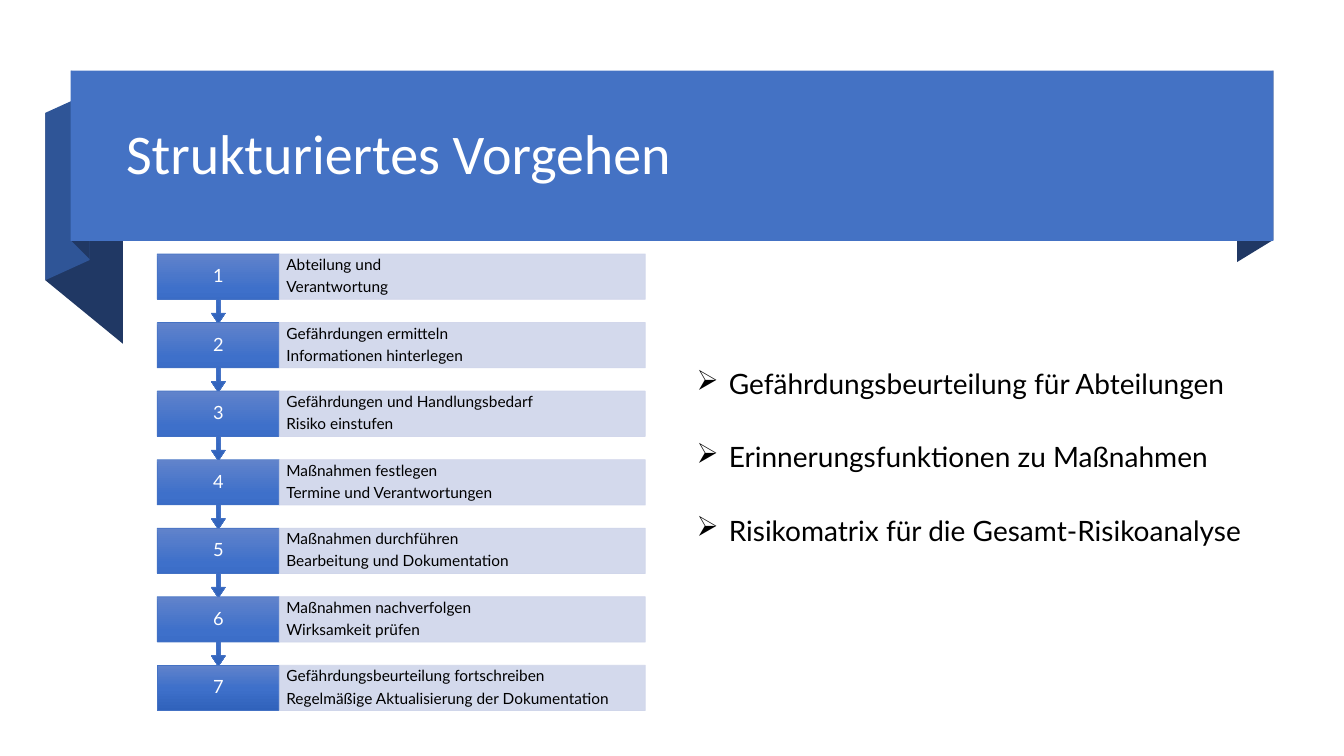
from dataclasses import dataclass

import lxml.etree
import pptx
import pptx.dml.color
import pptx.enum.shapes
import pptx.enum.text
import pptx.oxml
import pptx.oxml.ns
import pptx.shapes.autoshape
import pptx.shapes.base
import pptx.slide
import pptx.text.text
import pptx.util

EMU_PER_PX = 9144  # 100 px to the inch
COLORS = {
    "banner": "4472C4", "fold": "2F5597", "shade": "203864",
    "step_top": "6183CB", "step_middle": "3E70CA", "step_bottom": "3062BB",
    "bar": "CFD5EA", "light": "FFFFFF", "dark": "000000",
}
MAIN_NAMESPACE = pptx.oxml.ns.nsdecls("a")
SHAPE_KIND = pptx.enum.shapes.MSO_SHAPE
ALIGN = pptx.enum.text.PP_ALIGN


@dataclass(frozen=True)
class Box:
    left: int
    top: int
    width: int
    height: int

    def emu(self) -> tuple[int, int, int, int]:
        return px(self.left), px(self.top), px(self.width), px(self.height)


@dataclass(frozen=True)
class Fold:
    color: str
    points: tuple[tuple[int, int], ...]


@dataclass(frozen=True)
class TextStyle:
    size: int
    color: str
    font: str = "Lato"
    align: ALIGN = ALIGN.LEFT
    space_after: float = 0


@dataclass(frozen=True)
class Step:
    heading: str
    detail: str


FOLDS = (
    Fold("shade", ((1263, 238), (1227, 260), (1227, 91), (1263, 70))),
    Fold("shade", ((122, 341), (45, 278), (45, 112), (122, 175))),
    Fold("fold", ((89, 258), (45, 278), (45, 112), (89, 92))),
    Fold("shade", ((89, 257), (71, 239), (71, 70), (89, 89))),
)
BANNER = Box(70, 70, 1193, 169)
TITLE = Box(115, 83, 1127, 145)
BENEFITS = Box(681, 203, 652, 504)

STEPS = (
    Step("Abteilung und", "Verantwortung"),
    Step("Gefährdungen ermitteln", "Informationen hinterlegen"),
    Step("Gefährdungen und Handlungsbedarf", "Risiko einstufen"),
    Step("Maßnahmen festlegen", "Termine und Verantwortungen"),
    Step("Maßnahmen durchführen", "Bearbeitung und Dokumentation"),
    Step("Maßnahmen nachverfolgen", "Wirksamkeit prüfen"),
    Step("Gefährdungsbeurteilung fortschreiben", "Regelmäßige Aktualisierung der Dokumentation"),
)
STEP_LEFT, STEP_TOP, STEP_PITCH = 156, 252, 68
NUMBER_WIDTH, BAR_WIDTH, STEP_HEIGHT, CALLOUT_HEIGHT = 121, 363, 45, 69
CALLOUT_ADJUSTMENTS = (0.05, 0.1, 0.15, 0.65)

BENEFIT_TEXTS = (
    "Gefährdungsbeurteilung für Abteilungen",
    "Erinnerungsfunktionen zu Maßnahmen",
    "Risikomatrix für die Gesamt-Risikoanalyse",
)
BENEFIT_INDENT = 32

TITLE_STYLE = TextStyle(40, "light", "Calibri")
NUMBER_STYLE = TextStyle(13, "light", align=ALIGN.CENTER, space_after=4.55)
BAR_STYLE = TextStyle(11, "dark", space_after=3.85)
BENEFIT_STYLE = TextStyle(20, "dark")


def px(length: int) -> int:
    return length * EMU_PER_PX


def rgb(name: str) -> pptx.dml.color.RGBColor:
    return pptx.dml.color.RGBColor.from_string(COLORS[name])


def write_lines(
    frame: pptx.text.text.TextFrame, lines: tuple[str, ...], style: TextStyle,
    inset_x: int = 10, inset_y: int = 5,
) -> None:
    frame.word_wrap = True
    frame.auto_size = pptx.enum.text.MSO_AUTO_SIZE.NONE
    frame.vertical_anchor = pptx.enum.text.MSO_ANCHOR.MIDDLE
    frame.margin_left = frame.margin_right = px(inset_x)
    frame.margin_top = frame.margin_bottom = px(inset_y)
    for index, line in enumerate(lines):
        paragraph = frame.add_paragraph() if index else frame.paragraphs[0]
        paragraph.alignment = style.align
        paragraph.line_spacing = 0.9
        paragraph.space_after = pptx.util.Pt(style.space_after)
        run = paragraph.add_run()
        run.text = line
        run.font.name = style.font
        run.font.size = pptx.util.Pt(style.size)
        run.font.color.rgb = rgb(style.color)


def paint(shape: pptx.shapes.autoshape.Shape, fill: str, line: bool = False) -> None:
    shape.shadow.inherit = False
    shape.fill.solid()
    shape.fill.fore_color.rgb = rgb(fill)
    if line:
        shape.line.color.rgb = rgb(fill)
        shape.line.width = pptx.util.Pt(0.5)
    else:
        shape.line.fill.background()


def apply_step_gradient(shape: pptx.shapes.autoshape.Shape) -> None:
    stops = "".join(
        f'<a:gs pos="{position}"><a:srgbClr val="{COLORS[name]}"/></a:gs>'
        for position, name in ((0, "step_top"), (50000, "step_middle"), (100000, "step_bottom"))
    )
    gradient = pptx.oxml.parse_xml(
        f'<a:gradFill {MAIN_NAMESPACE} rotWithShape="0"><a:gsLst>{stops}</a:gsLst>'
        '<a:lin ang="5400000" scaled="0"/></a:gradFill>'
    )
    solid = shape.element.spPr.find(pptx.oxml.ns.qn("a:solidFill"))
    shape.element.spPr.replace(solid, gradient)


def draw_banner(slide: pptx.slide.Slide) -> None:
    for fold in FOLDS:
        builder = slide.shapes.build_freeform(*fold.points[0], scale=EMU_PER_PX)
        builder.add_line_segments(fold.points[1:], close=True)
        paint(builder.convert_to_shape(), fold.color)
    paint(slide.shapes.add_shape(SHAPE_KIND.RECTANGLE, *BANNER.emu()), "banner")

    # The title lies in front of the banner
    title = slide.shapes.title
    title.left, title.top, title.width, title.height = TITLE.emu()
    write_lines(title.text_frame, ("Strukturiertes Vorgehen",), TITLE_STYLE)
    title.element.getparent().append(title.element)


def draw_step(slide: pptx.slide.Slide, index: int, step: Step) -> None:
    top = STEP_TOP + index * STEP_PITCH
    number_box = Box(STEP_LEFT, top, NUMBER_WIDTH, STEP_HEIGHT)

    # Number field, with an arrow to the next step
    if index == len(STEPS) - 1:
        field = slide.shapes.add_shape(SHAPE_KIND.RECTANGLE, *number_box.emu())
    else:
        callout_box = Box(STEP_LEFT, top, NUMBER_WIDTH, CALLOUT_HEIGHT)
        field = slide.shapes.add_shape(SHAPE_KIND.UP_ARROW_CALLOUT, *callout_box.emu())
        field.rotation = 180
        for position, value in enumerate(CALLOUT_ADJUSTMENTS):
            field.adjustments[position] = value
    paint(field, "banner", line=True)
    apply_step_gradient(field)
    number = slide.shapes.add_textbox(*number_box.emu())
    write_lines(number.text_frame, (str(index + 1),), NUMBER_STYLE, 9, 10)

    # Description bar
    bar_box = Box(STEP_LEFT + NUMBER_WIDTH, top, BAR_WIDTH, STEP_HEIGHT)
    bar = slide.shapes.add_shape(SHAPE_KIND.RECTANGLE, *bar_box.emu())
    paint(bar, "bar", line=True)
    for color in bar.element.spPr.iter(pptx.oxml.ns.qn("a:srgbClr")):
        lxml.etree.SubElement(color, pptx.oxml.ns.qn("a:alpha"), val="90000")
    write_lines(bar.text_frame, (step.heading, step.detail), BAR_STYLE, 7, 15)


def draw_benefits(slide: pptx.slide.Slide) -> None:
    frame = slide.shapes.add_textbox(*BENEFITS.emu()).text_frame
    write_lines(frame, BENEFIT_TEXTS, BENEFIT_STYLE)
    for index, paragraph in enumerate(frame.paragraphs):
        paragraph.space_before = pptx.util.Pt(30.8 if index else 10)
        properties = paragraph._p.get_or_add_pPr()
        properties.set("marL", str(px(BENEFIT_INDENT)))
        properties.set("indent", str(-px(BENEFIT_INDENT)))
        lxml.etree.SubElement(properties, pptx.oxml.ns.qn("a:buChar"), char="➢")


def main() -> None:
    presentation = pptx.Presentation()
    presentation.slide_width, presentation.slide_height = px(1333), px(750)
    slide = presentation.slides.add_slide(presentation.slide_layouts[5])
    draw_banner(slide)
    draw_benefits(slide)
    for index, step in enumerate(STEPS):
        draw_step(slide, index, step)
    presentation.save("out.pptx")


if __name__ == "__main__":
    main()
